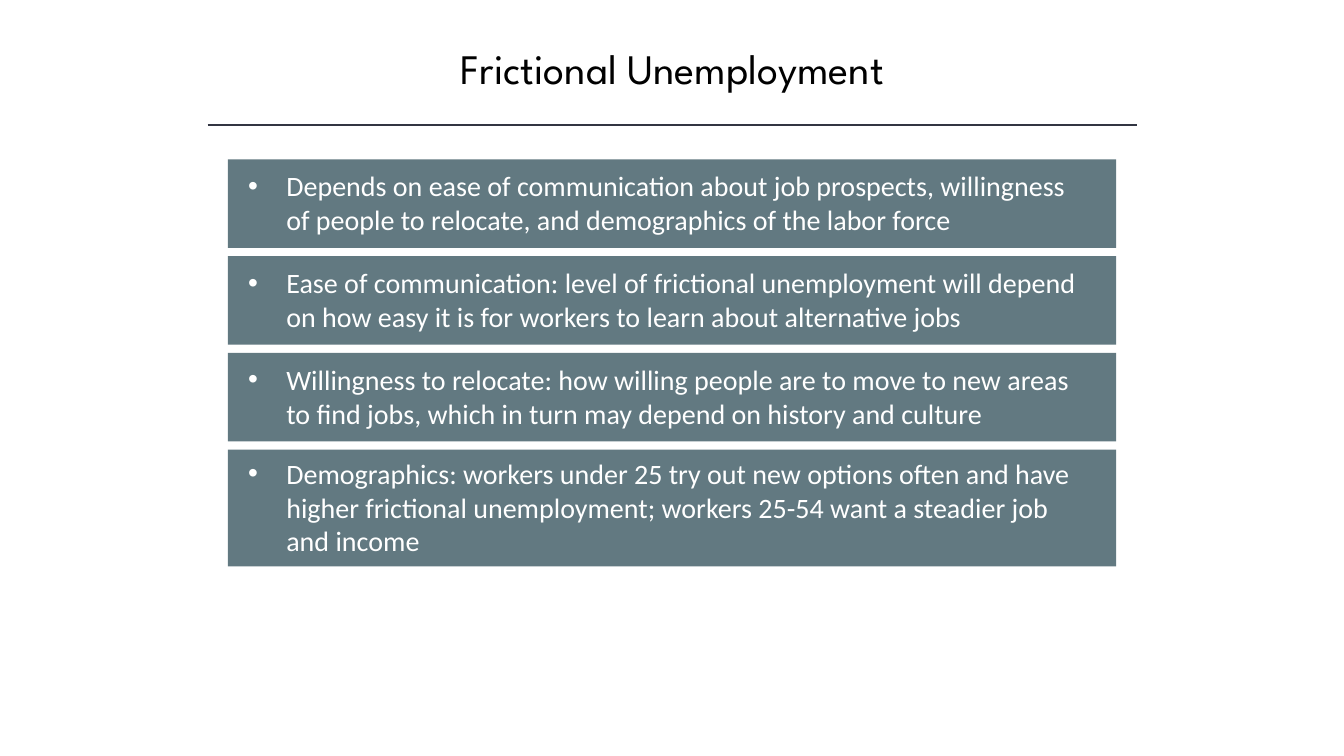
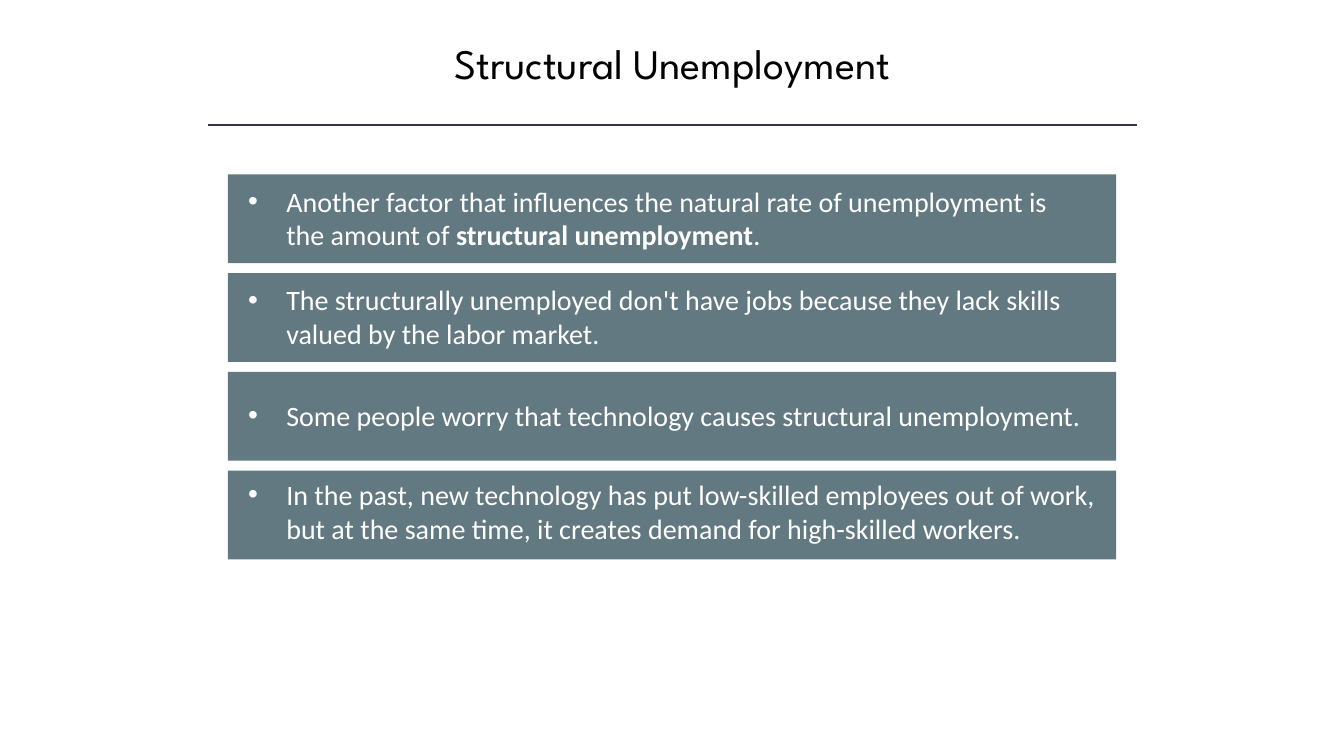
from lxml import etree
from pptx import Presentation
from pptx import util as u
from pptx.dml.color import RGBColor
from pptx.enum import shapes, text
from pptx.oxml import ns

EMU_PER_PX = 9144


def px(count):
    return u.Emu(count * EMU_PER_PX)


class LessonDeck:
    COLORS = {"title": "000000", "rule": "323542", "bar": "627981", "bar_text": "FFFFFF"}
    TITLE_FONT = "League Spartan"
    BODY_FONT = "Calibri"
    BAR_LEFT, BAR_WIDTH, BAR_HEIGHT = 226, 881, 88

    def __init__(self):
        self.deck = Presentation()
        self.deck.slide_width, self.deck.slide_height = px(1333), px(750)
        self.page = None

    def color(self, name):
        return RGBColor.from_string(self.COLORS[name])

    def style(self, para, font, size, color):
        para.font.name = font
        para.font.size = u.Pt(size)
        para.font.color.rgb = self.color(color)

    def add_page(self, title, title_top):
        self.page = self.deck.slides.add_slide(self.deck.slide_layouts[6])
        self.add_title(title, title_top)
        self.add_rule()

    def add_title(self, title, top):
        box = self.page.shapes.add_textbox(px(167), px(top), px(1000), px(61))
        box.text_frame.word_wrap = True
        para = box.text_frame.paragraphs[0]
        para.text = title
        para.alignment = text.PP_ALIGN.CENTER
        self.style(para, self.TITLE_FONT, 30, "title")

    def add_rule(self):
        rule = self.page.shapes.add_connector(
            shapes.MSO_CONNECTOR.STRAIGHT, px(206), px(124), px(1128), px(124))
        rule.line.color.rgb = self.color("rule")
        rule.line.width = u.Pt(1)
        etree.SubElement(rule.element.spPr, ns.qn("a:effectLst"))

    def add_bullet(self, para):
        props = para._p.get_or_add_pPr()
        props.set("marL", str(px(38)))
        props.set("indent", str(px(-38)))
        etree.SubElement(props, ns.qn("a:buFont")).set("typeface", "Arial")
        etree.SubElement(props, ns.qn("a:buChar")).set("char", "•")

    def add_bar(self, top, wording, height=BAR_HEIGHT, right_inset=27, lift=1):
        bar = self.page.shapes.add_shape(
            shapes.MSO_SHAPE.RECTANGLE,
            px(self.BAR_LEFT), px(top), px(self.BAR_WIDTH), px(height))
        bar.shadow.inherit = False
        bar.fill.solid()
        bar.fill.fore_color.rgb = self.color("bar")
        bar.line.fill.background()
        frame = bar.text_frame
        frame.word_wrap = True
        frame.vertical_anchor = text.MSO_ANCHOR.MIDDLE
        frame.margin_left, frame.margin_right = px(20), px(right_inset)
        frame.margin_top, frame.margin_bottom = px(5), px(5 + 2 * lift)
        para = frame.paragraphs[0]
        para.alignment = text.PP_ALIGN.LEFT
        self.add_bullet(para)
        self.style(para, self.BODY_FONT, 20, "bar_text")
        for index, part in enumerate(wording.split("**")):
            span = para.add_run()
            span.text = part
            if index % 2:
                span.font.bold = True

    def add_bars(self, top, gap, wordings, **last_bar):
        for index, wording in enumerate(wordings):
            options = last_bar if index == len(wordings) - 1 else {}
            self.add_bar(top + index * (self.BAR_HEIGHT + gap), wording, **options)


def main():
    lesson = LessonDeck()

    lesson.add_page("Frictional Unemployment", 37)
    lesson.add_bars(158, 8, [
        "Depends on ease of communication about job prospects, willingness of people "
        "to relocate, and demographics of the labor force",
        "Ease of communication: level of frictional unemployment will depend on how "
        "easy it is for workers to learn about alternative jobs",
        "Willingness to relocate: how willing people are to move to new areas to find "
        "jobs, which in turn may depend on history and culture",
        "Demographics: workers under 25 try out new options often and have higher "
        "frictional unemployment; workers 25-54 want a steadier job and income",
    ], height=116)

    lesson.add_page("Structural Unemployment", 32)
    lesson.add_bars(173, 10, [
        "Another factor that influences the natural rate of unemployment is the amount "
        "of **structural unemployment**.",
        "The structurally unemployed don't have jobs because they lack skills valued "
        "by the labor market.",
        "Some people worry that technology causes structural unemployment.",
        "In the past, new technology has put low-skilled employees out of work, but at "
        "the same time, it creates demand for high-skilled workers.",
    ], right_inset=10, lift=4)

    lesson.deck.save("out.pptx")


if __name__ == "__main__":
    main()
